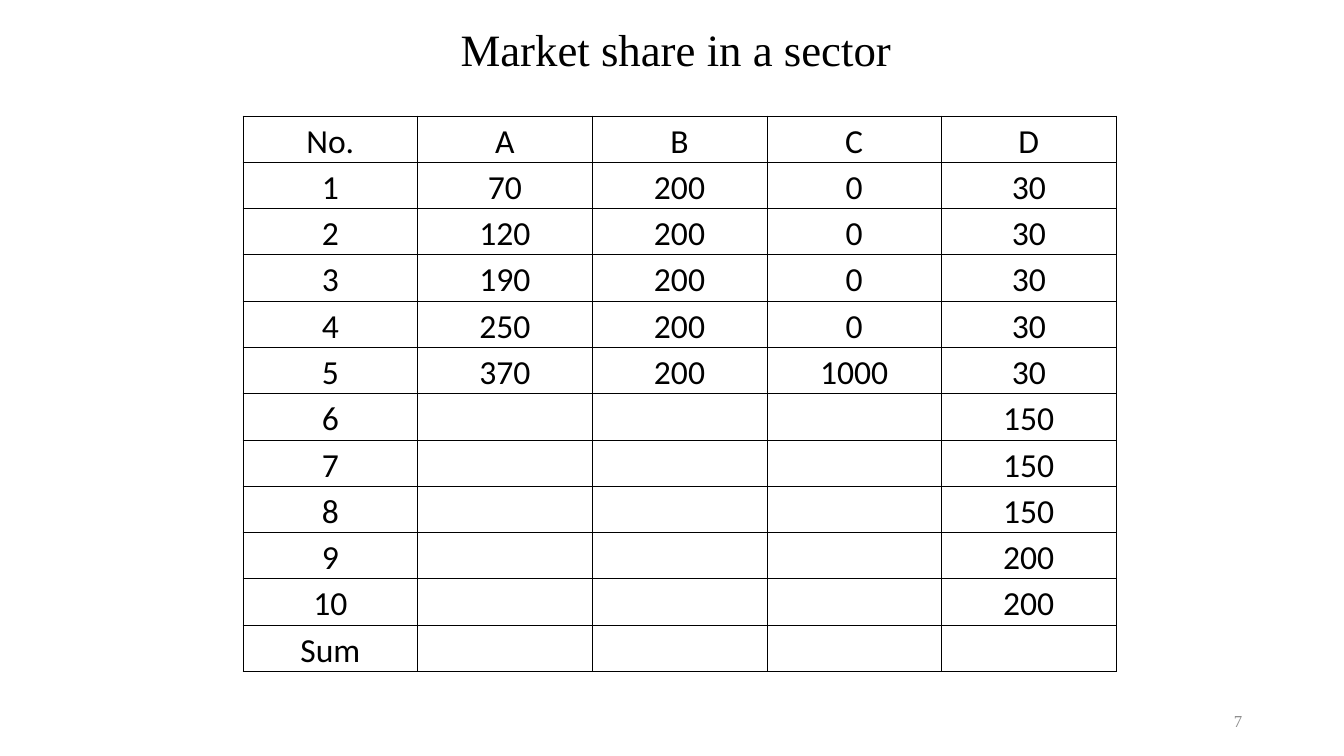
from dataclasses import dataclass

from lxml import etree
from pptx import Presentation
from pptx.dml.color import RGBColor
from pptx.enum.text import MSO_ANCHOR, PP_ALIGN
from pptx.oxml.ns import qn
from pptx.slide import Slide
from pptx.table import _Cell
from pptx.text.text import TextFrame
from pptx.util import Inches, Pt

CENTER, RIGHT = PP_ALIGN.CENTER, PP_ALIGN.RIGHT
MIDDLE, BOTTOM = MSO_ANCHOR.MIDDLE, MSO_ANCHOR.BOTTOM
BLACK = RGBColor(0x00, 0x00, 0x00)
GREY = RGBColor(0x8C, 0x8C, 0x8C)
SERIF, SANS = "Times New Roman", "Calibri"

SLIDE_W, SLIDE_H = Inches(13.33), Inches(7.5)
TABLE_LEFT, TABLE_TOP = Inches(2.41), Inches(1.15)
TABLE_W, TABLE_H = Inches(8.66), Inches(5.51)
BORDER_W = Pt(0.5)
BORDER_SIDES = ("a:lnL", "a:lnR", "a:lnT", "a:lnB")

HEADER = ["No.", "A", "B", "C", "D"]
SHARES = {
    "A": [70, 120, 190, 250, 370],
    "B": [200] * 5,
    "C": [0] * 4 + [1000],
    "D": [30] * 5 + [150] * 3 + [200] * 2,
}
FIRM_COUNT = 10


@dataclass
class Style:
    font: str
    size: float
    color: RGBColor
    align: PP_ALIGN


@dataclass
class Label:
    """A line of text; its box is given in shares of the slide's size."""
    text: str
    left: float
    top: float
    width: float
    height: float
    style: Style


CELL_STYLE = Style(SANS, 24, BLACK, CENTER)
LABELS = [
    Label("7", 9.42 / 13.33, 6.95 / 7.5, 3 / 13.33, 0.4 / 7.5,
          Style(SERIF, 12, GREY, RIGHT)),
    Label("Market share in a sector", 1.86 / 13.33, 0.13 / 7.5, 9.69 / 13.33,
          0.71 / 7.5, Style(SERIF, 32, BLACK, CENTER)),
]


def write(tf: TextFrame, text: str, style: Style) -> None:
    tf.text = text
    p = tf.paragraphs[0]
    p.alignment = style.align
    for r in p.runs:
        r.font.name = style.font
        r.font.size = Pt(style.size)
        r.font.color.rgb = style.color


def add_label(s: Slide, label: Label) -> None:
    sp = s.shapes.add_textbox(
        int(SLIDE_W * label.left), int(SLIDE_H * label.top),
        int(SLIDE_W * label.width), int(SLIDE_H * label.height))
    tf = sp.text_frame
    tf.word_wrap = True
    tf.vertical_anchor = MIDDLE
    write(tf, label.text, label.style)


def add_borders(cell: _Cell) -> None:
    tc_pr = cell._tc.get_or_add_tcPr()
    for side in BORDER_SIDES:
        ln = etree.SubElement(tc_pr, qn(side), w=str(BORDER_W))
        fill = etree.SubElement(ln, qn("a:solidFill"))
        etree.SubElement(fill, qn("a:srgbClr"), val=str(BLACK))


def format_cell(cell: _Cell, text: str) -> None:
    add_borders(cell)
    cell.fill.background()
    cell.margin_left = cell.margin_right = cell.margin_top = Inches(0.01)
    cell.margin_bottom = 0
    cell.vertical_anchor = BOTTOM
    write(cell.text_frame, text, CELL_STYLE)


def share_rows() -> list[list[str]]:
    rows = [HEADER]
    for i in range(FIRM_COUNT):
        values = [str(v[i]) if i < len(v) else "" for v in SHARES.values()]
        rows.append([str(i + 1)] + values)
    rows.append(["Sum"] + [""] * len(SHARES))
    return rows


def add_share_table(s: Slide, rows: list[list[str]]) -> None:
    table = s.shapes.add_table(len(rows), len(HEADER), TABLE_LEFT, TABLE_TOP,
                               TABLE_W, TABLE_H).table
    table.first_row = table.horz_banding = False
    for i, row in enumerate(rows):
        for j, text in enumerate(row):
            format_cell(table.cell(i, j), text)


def main() -> None:
    prs = Presentation()
    prs.slide_width, prs.slide_height = SLIDE_W, SLIDE_H
    s = prs.slides.add_slide(prs.slide_layouts[6])

    # Page number and title
    for label in LABELS:
        add_label(s, label)

    # Market shares
    add_share_table(s, share_rows())

    prs.save("out.pptx")


if __name__ == "__main__":
    main()
